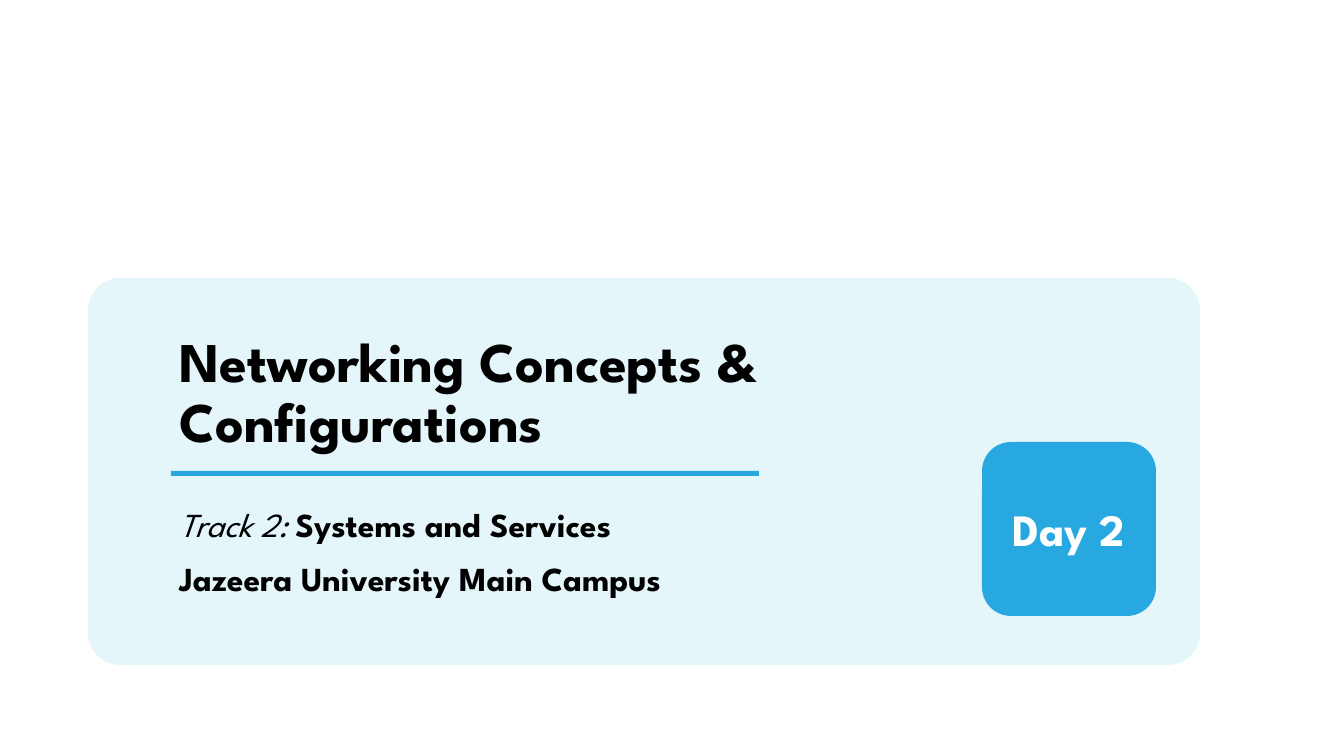
"""Build the title slide for day 2 of a networking course."""
from pptx import Presentation, util as u
from pptx.dml.color import RGBColor
from pptx.enum import shapes, text

BLACK = RGBColor(0, 0, 0)
WHITE = RGBColor(255, 255, 255)
PALE = RGBColor(0xE5, 0xF6, 0xFB)
BLUE = RGBColor(0x27, 0xA8, 0xE0)
FONT = "League Spartan"
KIND = shapes.MSO_SHAPE
LEFT = 171


def px(*vals):
    return [round(v * u.Inches(1) / 84) for v in vals]


def block(slide, kind, box, color):
    shape = slide.shapes.add_shape(kind, *px(*box))
    shape.shadow.inherit = False
    shape.fill.solid()
    shape.fill.fore_color.rgb = color
    shape.line.fill.background()
    return shape


def write(shape, runs, size, color=BLACK, align=text.PP_ALIGN.LEFT, lead=0.9):
    frame = shape.text_frame
    frame.word_wrap = True
    frame.auto_size = text.MSO_AUTO_SIZE.NONE
    frame.vertical_anchor = text.MSO_ANCHOR.MIDDLE
    para = frame.paragraphs[0]
    para.alignment, para.line_spacing = align, lead
    para.space_before = u.Pt(0)
    font = para.font
    font.name, font.size, font.color.rgb = FONT, u.Pt(size), color
    for words, bold in runs:
        run = para.add_run()
        run.text = words
        run.font.bold, run.font.italic = bold, not bold


def place(shape, box):
    shape.left, shape.top, shape.width, shape.height = px(*box)
    return shape


def main():
    deck = Presentation()
    deck.slide_width, deck.slide_height = px(1344, 756)
    slide = deck.slides.add_slide(deck.slide_layouts[0])

    panel = block(slide, KIND.ROUNDED_RECTANGLE, (88, 278, 1112, 387), PALE)
    panel.adjustments[0] = 0.083
    slide.shapes.element.insert(2, panel.element)

    title = place(slide.shapes.title, (LEFT, 325, 729, 139))
    write(title, [("Networking Concepts & Configurations", True)], 48)
    block(slide, KIND.RECTANGLE, (LEFT, 471, 588, 5), BLUE)

    track = place(slide.placeholders[1], (LEFT, 505, 527, 44))
    write(track, [("Track 2: ", False), ("Systems and Services", True)], 28.8)
    venue = slide.shapes.add_textbox(*px(LEFT, 559, 554, 44))
    write(venue, [("Jazeera University Main Campus", True)], 28.8)

    badge = block(slide, KIND.ROUNDED_RECTANGLE, (982, 442, 174, 174), BLUE)
    write(badge, [("Day 2", True)], 38.4, WHITE, text.PP_ALIGN.CENTER, 1.0)
    deck.save("out.pptx")


if __name__ == "__main__":
    main()
